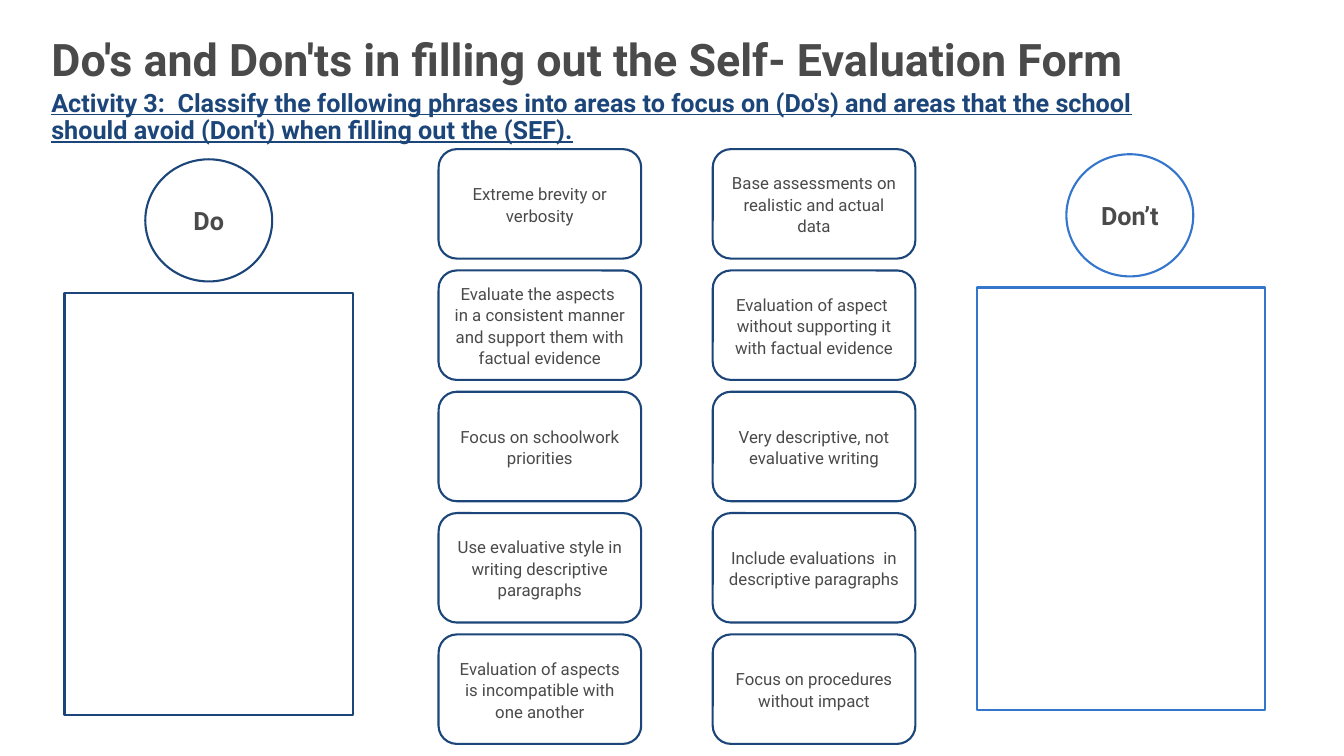
from dataclasses import dataclass

import pptx
import pptx.dml.color
import pptx.enum.shapes
import pptx.enum.text
import pptx.util

SHAPES = pptx.enum.shapes.MSO_SHAPE
ALIGN = pptx.enum.text.PP_ALIGN
ANCHOR = pptx.enum.text.MSO_ANCHOR
WIDTH, HEIGHT = pptx.util.Inches(13.33), pptx.util.Inches(7.5)


@dataclass(frozen=True)
class Theme:
    font: str = "Roboto"
    ink: str = "4A4A4A"
    navy: str = "1C4679"
    blue: str = "3376CC"
    paper: str = "FFFFFF"
    title: int = 32
    lead: int = 18
    card: int = 12
    outline: float = 1.5


@dataclass(frozen=True)
class Box:
    """A region in percent of the slide's width and height."""
    left: float
    top: float
    width: float
    height: float

    def share(self, x, y, w, h):
        """A region given in shares of this one."""
        return Box(self.left + x * self.width, self.top + y * self.height,
                   w * self.width, h * self.height)

    def lengths(self):
        return (int(WIDTH * self.left / 100), int(HEIGHT * self.top / 100),
                int(WIDTH * self.width / 100), int(HEIGHT * self.height / 100))


THEME = Theme()
PHRASES = [
    ("Extreme brevity or verbosity",
     "Base assessments on realistic and actual data"),
    ("Evaluate the aspects  in a consistent manner and support them with factual evidence",
     "Evaluation of aspect  without supporting it with factual evidence"),
    ("Focus on schoolwork priorities",
     "Very descriptive, not evaluative writing"),
    ("Use evaluative style in writing descriptive paragraphs",
     "Include evaluations  in descriptive paragraphs"),
    ("Evaluation of aspects is incompatible with one another",
     "Focus on procedures without impact"),
]


def rgb(colour):
    return pptx.dml.color.RGBColor.from_string(colour)


def write(holder, text, size, colour=THEME.ink, bold=False, underline=False,
          align=ALIGN.CENTER, anchor=ANCHOR.MIDDLE, spacing=1.0):
    frame = holder.text_frame
    frame.text = text
    frame.word_wrap = True
    frame.auto_size = pptx.enum.text.MSO_AUTO_SIZE.NONE
    frame.vertical_anchor = anchor
    paragraph = frame.paragraphs[0]
    paragraph.alignment = align
    paragraph.line_spacing = spacing
    for run in paragraph.runs:
        run.font.name = THEME.font
        run.font.size = pptx.util.Pt(size)
        run.font.bold = bold
        run.font.underline = underline
        run.font.color.rgb = rgb(colour)


def outlined(slide, kind, box, colour):
    outline = slide.shapes.add_shape(kind, *box.lengths())
    outline.shadow.inherit = False
    outline.fill.solid()
    outline.fill.fore_color.rgb = rgb(THEME.paper)
    outline.line.color.rgb = rgb(colour)
    outline.line.width = pptx.util.Pt(THEME.outline)
    return outline


def heading(slide, box):
    # Title
    title = slide.shapes.title
    title.left, title.top, title.width, title.height = box.share(0, 0, 1, 0.7).lengths()
    write(title, "Do's and Don'ts in filling out the Self- Evaluation Form",
          THEME.title, bold=True, align=ALIGN.LEFT, spacing=0.9)
    # Activity instruction
    activity = slide.shapes.add_textbox(*box.share(0, 0.55, 0.97, 0.45).lengths())
    write(activity, "Activity 3:  Classify the following phrases into areas to focus on "
          "(Do's) and areas that the school should avoid (Don't) when filling out the (SEF).",
          THEME.lead, THEME.navy, bold=True, underline=True,
          align=ALIGN.LEFT, anchor=ANCHOR.TOP, spacing=0.9)


def sorting_bin(slide, box, label, colour, label_left):
    # Round label above an empty answer panel
    badge = outlined(slide, SHAPES.OVAL, box.share(label_left, 0, 0.44, 0.22), colour)
    write(badge, label, THEME.lead, bold=True)
    outlined(slide, SHAPES.RECTANGLE, box.share(0, 0.24, 1, 0.76), colour)


def phrase_cards(slide, box):
    # Two columns of cards; gaps are shares of the whole block
    column_gap, row_gap = 0.15, 0.02
    card_width = (1 - column_gap) / 2
    card_height = (1 - row_gap * (len(PHRASES) - 1)) / len(PHRASES)
    for row, pair in enumerate(PHRASES):
        for column, phrase in enumerate(pair):
            place = box.share(column * (card_width + column_gap),
                              row * (card_height + row_gap), card_width, card_height)
            card = outlined(slide, SHAPES.ROUNDED_RECTANGLE, place, THEME.navy)
            frame = card.text_frame
            frame.margin_left = frame.margin_right = pptx.util.Inches(0.08)
            write(card, phrase, THEME.card, spacing=1.07)


def main():
    deck = pptx.Presentation()
    deck.slide_width, deck.slide_height = WIDTH, HEIGHT
    slide = deck.slides.add_slide(deck.slide_layouts[5])
    heading(slide, Box(3.08, 2.8, 90.4, 15.47))
    sorting_bin(slide, Box(4.8, 21.07, 21.46, 73.47), "Do", THEME.navy, 0.28)
    sorting_bin(slide, Box(72.69, 20.4, 21.46, 73.47), "Don’t", THEME.blue, 0.31)
    phrase_cards(slide, Box(32.63, 19.73, 35.48, 78.67))
    deck.save("out.pptx")


if __name__ == "__main__":
    main()
